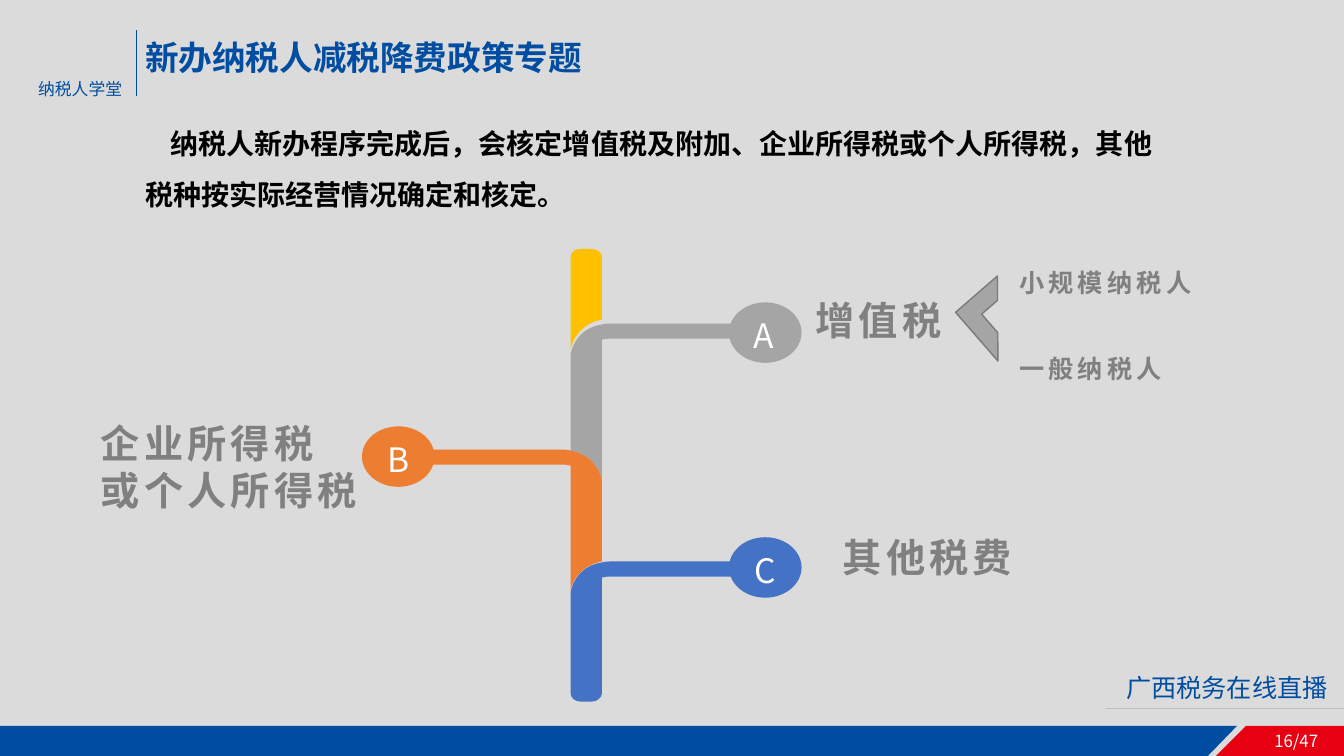
from lxml import etree
from pptx import Presentation
from pptx.dml.color import RGBColor
from pptx.enum import shapes, text
from pptx.oxml import ns
from pptx.util import Inches, Pt

FONT = "Noto Sans CJK SC"
BACKDROP = RGBColor(0xDB, 0xDB, 0xDB)
NAVY = RGBColor(0x00, 0x4D, 0xA1)
RED = RGBColor(0xE6, 0x00, 0x12)
SILVER = RGBColor(0xBF, 0xBF, 0xBF)
GOLD = RGBColor(0xFF, 0xC0, 0x00)
BLUE = RGBColor(0x44, 0x72, 0xC4)
ORANGE = RGBColor(0xED, 0x7D, 0x31)
GRAY = RGBColor(0xA5, 0xA5, 0xA5)
OUTLINE = RGBColor(0x7A, 0x7A, 0x7A)
LABEL = RGBColor(0x80, 0x80, 0x80)
WHITE = RGBColor(0xFF, 0xFF, 0xFF)
BLACK = RGBColor(0x00, 0x00, 0x00)

# (left, top, width, height), lines, size, colour, bold, letter spacing in points
TEXTS = [
    ((12.54, 7.2, 0.69, 0.4), ["16/47"], 12, WHITE, False, 0),
    ((0.28, 0.73, 1.08, 0.3), ["纳税人学堂"], 12, NAVY, False, 0),
    ((11.07, 6.62, 2.59, 0.4), ["广西税务在线直播"], 18, NAVY, False, 0),
    ((1.34, 0.32, 7.52, 0.5), ["新办纳税人减税降费政策专题"], 24, NAVY, True, 0),
    ((7.99, 2.89, 2.02, 0.57), ["增值税"], 28, LABEL, True, 3),
    ((0.9, 4.11, 2.82, 1.04), ["企业所得税", "或个人所得税"], 28, LABEL, True, 3),
    ((8.26, 5.24, 2.56, 1.04), ["其他税费"], 28, LABEL, True, 3),
    ((10.01, 2.6, 2.09, 0.4), ["小规模纳税人"], 18, LABEL, True, 3),
    ((10.01, 3.46, 2.09, 0.4), ["一般纳税人"], 18, LABEL, True, 3),
]
INTRO = "纳税人新办程序完成后，会核定增值税及附加、企业所得税或个人所得税，其他税种按实际经营情况确定和核定。"
RULES = [((1.35, 0.3), (1.35, 0.95), NAVY), ((10.97, 7.03), (13.37, 7.03), SILVER)]
# Letter, left of its text, left and top of the badge, colour
BADGES = [
    ("C", 7.35, 7.23, 5.33, BLUE),
    ("A", 7.34, 7.23, 3.0, GRAY),
    ("B", 3.72, 3.59, 4.23, ORANGE),
]

# Outlines: a pair is a straight step, six numbers are a cubic curve
SPINE_LEFT, SPINE_RIGHT, SPINE_TOP, SPINE_BOTTOM = 5.66, 5.97, 2.47, 6.96
ROUND = 0.08
ARM = 0.15
A_TOP, B_TOP, C_TOP = 3.21, 4.46, 5.57


def right_branch(top, end):
    """Arm to the right that bends down into the spine and closes with end."""
    return [
        (7.58, top), (6.08, top),
        (6.04, top, 6, top, SPINE_RIGHT, top + 0.01),
        (5.76, top + 0.04, 5.68, top + 0.2, SPINE_LEFT, top + 0.3),
        *end,
        (SPINE_RIGHT, top + 0.16),
        (6, top + 0.15, 6.03, top + ARM, 6.07, top + ARM),
        (7.59, top + ARM),
        (7.63, top + ARM, 7.67, top + 0.11, 7.67, top + 0.07),
        (7.67, top + 0.03, 7.63, top, 7.58, top),
    ]


OUTLINES = [
    (NAVY, [(0, 7.2), (12.27, 7.2), (11.96, 7.52), (0, 7.52)]),
    (RED, [(12.36, 7.2), (13.33, 7.2), (13.33, 7.52), (12.04, 7.52)]),
    (GOLD, [
        (SPINE_RIGHT, 3.17), (SPINE_RIGHT, SPINE_TOP + ROUND),
        (SPINE_RIGHT, 2.5, 5.92, SPINE_TOP, 5.87, SPINE_TOP),
        (5.76, SPINE_TOP),
        (5.7, SPINE_TOP, SPINE_LEFT, 2.5, SPINE_LEFT, SPINE_TOP + ROUND),
        (SPINE_LEFT, 3.46), (5.68, 3.37, 5.76, 3.21, SPINE_RIGHT, 3.17),
    ]),
    (BLUE, right_branch(C_TOP, [
        (SPINE_LEFT, SPINE_BOTTOM - ROUND),
        (SPINE_LEFT, 6.92, 5.7, SPINE_BOTTOM, 5.76, SPINE_BOTTOM),
        (5.87, SPINE_BOTTOM),
        (5.92, SPINE_BOTTOM, SPINE_RIGHT, 6.92, SPINE_RIGHT, SPINE_BOTTOM - ROUND),
    ])),
    (ORANGE, [
        (4.04, B_TOP), (5.55, B_TOP), (5.59, B_TOP, 5.62, B_TOP, SPINE_LEFT, 4.47),
        (5.86, 4.5, 5.95, 4.66, SPINE_RIGHT, 4.76),
        (SPINE_RIGHT, C_TOP), (5.76, 5.61, 5.67, 5.77, SPINE_LEFT, 5.86),
        (SPINE_LEFT, 4.62), (5.63, 4.61, 5.6, 4.61, 5.56, B_TOP + ARM),
        (4.04, B_TOP + ARM), (3.99, B_TOP + ARM, 3.95, 4.57, 3.95, 4.53),
        (3.95, 4.49, 3.99, B_TOP, 4.04, B_TOP),
    ]),
    (GRAY, right_branch(A_TOP, [
        (SPINE_LEFT, 4.47), (5.86, 4.5, 5.95, 4.66, SPINE_RIGHT, 4.76),
    ])),
]


def paint(shape, color):
    shape.shadow.inherit = False
    shape.fill.solid()
    shape.fill.fore_color.rgb = color
    shape.line.fill.background()


def add_outline(page, color, outline):
    """Draw all points as straight steps, then merge each curve's three into one."""
    points = [(Inches(step[i]), Inches(step[i + 1]))
              for step in outline for i in range(0, len(step), 2)]
    builder = page.shapes.build_freeform(*points[0])
    builder.add_line_segments(points[1:], close=True)
    shape = builder.convert_to_shape()
    segments = iter(list(shape._element.iter(ns.qn("a:lnTo"))))
    for step in outline[1:]:
        first = next(segments)
        if len(step) == 6:
            first.tag_name = None
            curve = etree.Element(ns.qn("a:cubicBezTo"))
            first.addprevious(curve)
            for segment in (first, next(segments), next(segments)):
                curve.append(segment[0])
                segment.getparent().remove(segment)
    paint(shape, color)


def format_text(para, size, color, bold=False, spacing=0):
    for span in para.runs:
        font = span.font
        font.name, font.size, font.bold = FONT, Pt(size), bold
        font.color.rgb = color
        props = span._r.get_or_add_rPr()
        etree.SubElement(props, ns.qn("a:ea")).set("typeface", FONT)
        if spacing:
            props.set("spc", str(spacing * 100))


def add_text(page, place, lines, *style):
    box = page.shapes.add_textbox(*map(Inches, place))
    box.text_frame.word_wrap = True
    box.text_frame.text = "\n".join(lines)
    for para in box.text_frame.paragraphs:
        format_text(para, *style)
    return box


def main():
    deck = Presentation()
    deck.slide_width, deck.slide_height = Inches(13.33), Inches(7.5)
    page = deck.slides.add_slide(deck.slide_layouts[6])
    page.background.fill.solid()
    page.background.fill.fore_color.rgb = BACKDROP

    for color, outline in OUTLINES:
        add_outline(page, color, outline)

    for start, end, color in RULES:
        rule = page.shapes.add_connector(
            shapes.MSO_CONNECTOR.STRAIGHT, *map(Inches, start + end))
        rule.line.color.rgb = color
        rule.line.width = Pt(0.5)
        etree.SubElement(rule._element.spPr, ns.qn("a:effectLst"))

    for letter, letter_left, left, top, color in BADGES:
        badge = page.shapes.add_shape(
            shapes.MSO_SHAPE.OVAL, *map(Inches, (left, top, 0.72, 0.6)))
        paint(badge, color)
        box = add_text(page, (letter_left, top + 0.08, 0.47, 0.5), [letter], 24, WHITE)
        box.text_frame.paragraphs[0].alignment = text.PP_ALIGN.CENTER

    for place, lines, *style in TEXTS:
        add_text(page, place, lines, *style)

    intro = add_text(page, (1.34, 1.04, 10.35, 1.11), [INTRO], 20, BLACK, True)
    para = intro.text_frame.paragraphs[0]
    para.line_spacing = 1.5
    para._p.get_or_add_pPr().set("indent", str(Inches(0.25)))

    fork = page.shapes.add_shape(
        shapes.MSO_SHAPE.HALF_FRAME, *map(Inches, (9.62, 2.84, 0.55, 0.64)))
    paint(fork, GRAY)
    fork.line.color.rgb = OUTLINE
    fork.line.width = Pt(1)
    fork.rotation = 319

    deck.save("out.pptx")


if __name__ == "__main__":
    main()
